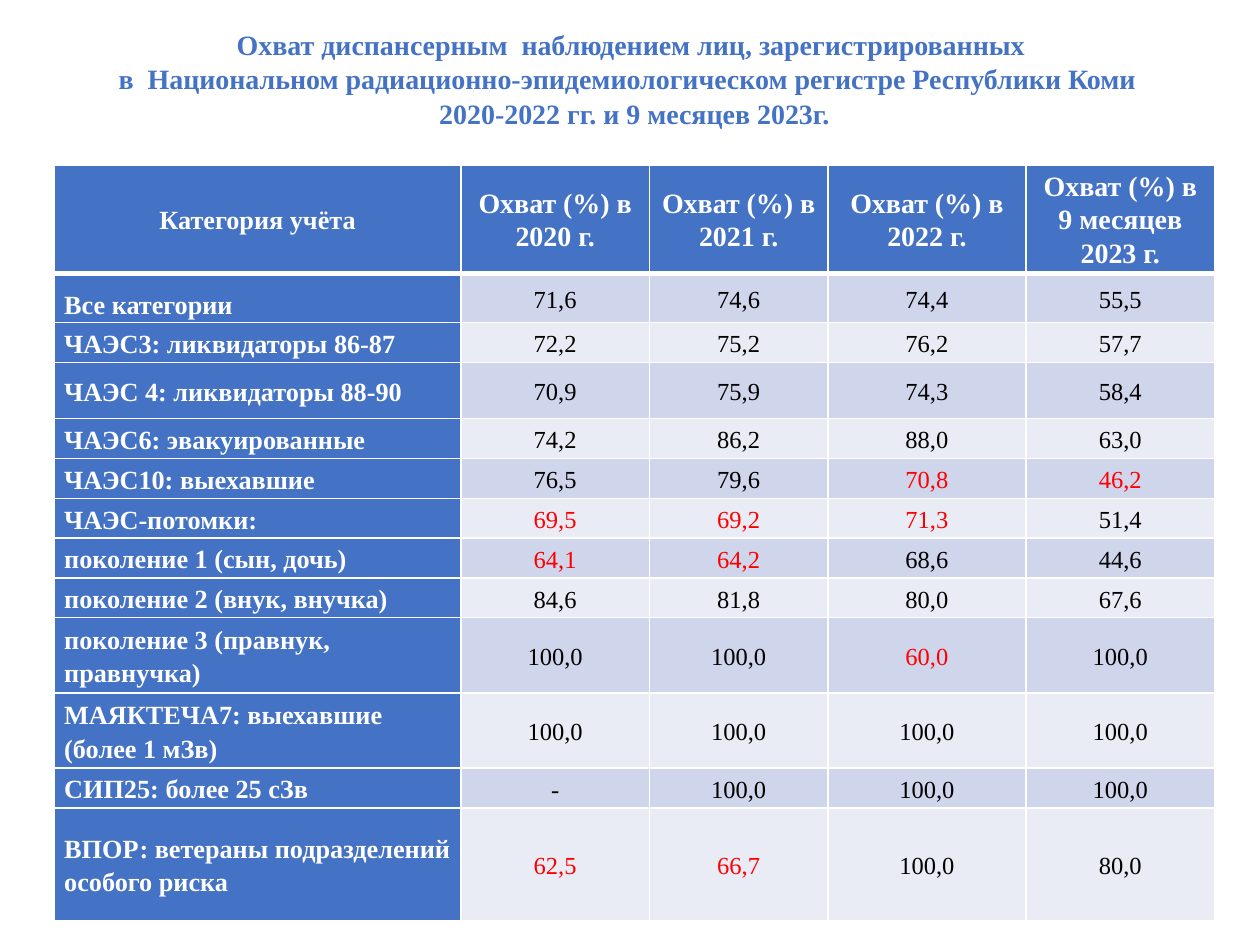
from dataclasses import dataclass

from lxml import etree
from pptx import Presentation
from pptx.dml.color import RGBColor
from pptx.enum import text
from pptx.oxml import ns
from pptx.util import Pt


@dataclass(frozen=True)
class Theme:
    font: str = "Times New Roman"
    blue: str = "4472C4"
    white: str = "FFFFFF"
    black: str = "000000"
    red: str = "FF0000"
    bands: tuple = ("CFD5EA", "E9EBF5")
    heading_size: float = 16
    label_size: float = 15
    value_size: float = 14


THEME = Theme()

TITLE = (
    "Охват диспансерным  наблюдением лиц, зарегистрированных \v"
    "в  Национальном радиационно-эпидемиологическом регистре Республики Коми  \v"
    "2020-2022 гг. и 9 месяцев 2023г."
)
HEADINGS = (
    "Категория учёта",
    "Охват (%) в 2020 г.",
    "Охват (%) в 2021 г.",
    "Охват (%) в 2022 г.",
    "Охват (%) в 9 месяцев 2023 г.",
)
COLUMN_WIDTHS = (232.5, 107.5, 102.2, 113, 108)
HEADER_HEIGHT = 61.9
LINE_ROW = 22.75
TWO_LINE_ROW = 43

# category, row height, coverage by period, periods shown in red
COVERAGE = (
    ("Все категории", 28.1, "71,6 74,6 74,4 55,5", ()),
    ("ЧАЭС3: ликвидаторы 86-87", LINE_ROW, "72,2 75,2 76,2 57,7", ()),
    ("ЧАЭС 4: ликвидаторы 88-90", 32.2, "70,9 75,9 74,3 58,4", ()),
    ("ЧАЭС6: эвакуированные", LINE_ROW, "74,2 86,2 88,0 63,0", ()),
    ("ЧАЭС10: выехавшие", LINE_ROW, "76,5 79,6 70,8 46,2", (3, 4)),
    ("ЧАЭС-потомки:", LINE_ROW, "69,5 69,2 71,3 51,4", (1, 2, 3)),
    ("поколение 1 (сын, дочь)", LINE_ROW, "64,1 64,2 68,6 44,6", (1, 2)),
    ("поколение 2 (внук, внучка)", LINE_ROW, "84,6 81,8 80,0 67,6", ()),
    ("поколение 3 (правнук, правнучка)", TWO_LINE_ROW, "100,0 100,0 60,0 100,0", (3,)),
    ("МАЯКТЕЧА7: выехавшие (более 1 мЗв)", TWO_LINE_ROW, "100,0 100,0 100,0 100,0", ()),
    ("СИП25: более 25 сЗв", LINE_ROW, "- 100,0 100,0 100,0", ()),
    ("ВПОР: ветераны подразделений особого риска", 64.5, "62,5 66,7 100,0 80,0", (1, 2)),
)


def write(frame, words, *, size, color, bold=False, align=text.PP_ALIGN.CENTER, spacing=1.0):
    frame.word_wrap = True
    paragraph = frame.paragraphs[0]
    paragraph.text = words
    paragraph.alignment = align
    paragraph.line_spacing = spacing
    for run in paragraph.runs:
        run.font.name = THEME.font
        run.font.size = Pt(size)
        run.font.bold = bold
        run.font.color.rgb = RGBColor.from_string(color)


def draw_borders(cell, top=1, bottom=1):
    properties = cell._tc.get_or_add_tcPr()
    for side, width in (("L", 1), ("R", 1), ("T", top), ("B", bottom)):
        line = etree.SubElement(properties, ns.qn(f"a:ln{side}"), w=str(Pt(width)))
        fill = etree.SubElement(line, ns.qn("a:solidFill"))
        etree.SubElement(fill, ns.qn("a:srgbClr"), val=THEME.white)


def fill_cell(cell, words, background, top=1, bottom=1, **text_format):
    cell.margin_left = cell.margin_right = Pt(5)
    cell.margin_top = cell.margin_bottom = 0
    cell.vertical_anchor = text.MSO_ANCHOR.MIDDLE
    draw_borders(cell, top, bottom)
    cell.fill.solid()
    cell.fill.fore_color.rgb = RGBColor.from_string(background)
    write(cell.text_frame, words, **text_format)


def add_title(slide):
    frame = slide.shapes.add_textbox(Pt(31), Pt(15), Pt(663), Pt(73)).text_frame
    frame.margin_left = frame.margin_right = Pt(7.2)
    frame.margin_top = frame.margin_bottom = 0
    frame.vertical_anchor = text.MSO_ANCHOR.TOP
    write(frame, TITLE, size=THEME.heading_size, color=THEME.blue, bold=True, spacing=1.03)


def add_header(table):
    for column, heading in enumerate(HEADINGS):
        fill_cell(
            table.cell(0, column), heading, THEME.blue, bottom=3, bold=True,
            size=THEME.heading_size if column else THEME.label_size,
            color=THEME.white, spacing=1.07,
        )


def add_category(table, row, category, values, red_periods):
    top = 3 if row == 1 else 1
    label = table.cell(row, 0)
    fill_cell(
        label, category, THEME.blue, top=top, bold=True, size=THEME.label_size,
        color=THEME.white, align=text.PP_ALIGN.LEFT, spacing=1.5 if row == 1 else 1.15,
    )
    label.margin_left = Pt(5.7)
    for period, value in enumerate(values.split(), start=1):
        fill_cell(
            table.cell(row, period), value, THEME.bands[(row - 1) % 2], top=top,
            size=THEME.value_size, spacing=1.15,
            color=THEME.red if period in red_periods else THEME.black,
        )


def add_coverage_table(slide):
    heights = [HEADER_HEIGHT] + [entry[1] for entry in COVERAGE]
    table = slide.shapes.add_table(
        len(heights), len(HEADINGS), Pt(31), Pt(94.4),
        Pt(sum(COLUMN_WIDTHS)), Pt(sum(heights)),
    ).table
    for column, width in zip(table.columns, COLUMN_WIDTHS):
        column.width = Pt(width)
    for table_row, height in zip(table.rows, heights):
        table_row.height = Pt(height)
    add_header(table)
    for row, (category, _, values, red_periods) in enumerate(COVERAGE, start=1):
        add_category(table, row, category, values, red_periods)


def main():
    deck = Presentation()
    deck.slide_width, deck.slide_height = Pt(720), Pt(540)
    slide = deck.slides.add_slide(deck.slide_layouts[6])
    add_title(slide)
    add_coverage_table(slide)
    deck.save("out.pptx")


if __name__ == "__main__":
    main()
